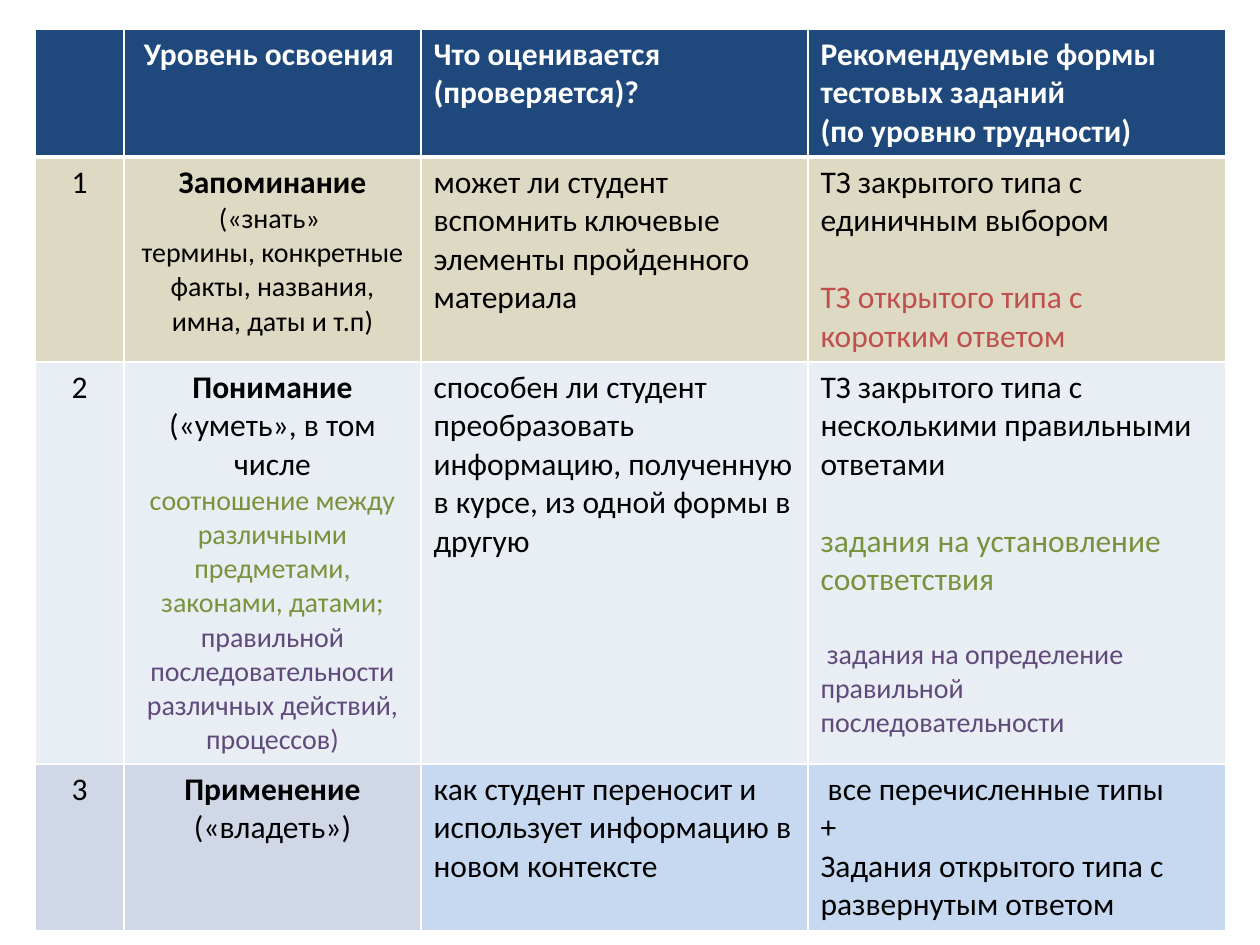
import pptx
import pptx.util
import pptx.dml.color
import pptx.enum.text
import pptx.oxml
from dataclasses import dataclass
from lxml import etree

RGBColor = pptx.dml.color.RGBColor
PP_ALIGN = pptx.enum.text.PP_ALIGN

WHITE = RGBColor(0xFF, 0xFF, 0xFF)
BLACK = RGBColor(0, 0, 0)
NAVY = RGBColor(0x1F, 0x49, 0x7D)
SAND = RGBColor(0xDD, 0xD9, 0xC3)
PALE = RGBColor(0xE9, 0xED, 0xF4)
MIST = RGBColor(0xD0, 0xD8, 0xE8)
SKY = RGBColor(0xC6, 0xD9, 0xF1)
RED = RGBColor(0xC0, 0x50, 0x4D)
GREEN = RGBColor(0x77, 0x93, 0x3C)
PURPLE = RGBColor(0x60, 0x4A, 0x7B)

EMU_PER_PX = 914400 // 126


def px(length):
    return pptx.util.Emu(length * EMU_PER_PX)


@dataclass
class Line:
    """One paragraph of a cell."""
    text: str
    size: int = 18
    color: RGBColor = BLACK
    bold: bool = False
    gap: int = 0


class Page:
    font = "Calibri"

    def __init__(self, deck):
        self.slide = deck.slides.add_slide(deck.slide_layouts[6])

    def table(self, left, top, widths, heights):
        frame = self.slide.shapes.add_table(
            len(heights), len(widths), px(left), px(top),
            px(sum(widths)), px(sum(heights)))
        for column, width in zip(frame.table.columns, widths):
            column.width = px(width)
        for row, height in zip(frame.table.rows, heights):
            row.height = px(height)
        return frame.table

    def cell(self, box, lines, fill, centred):
        box.fill.solid()
        box.fill.fore_color.rgb = fill
        frame = box.text_frame
        for index, line in enumerate(lines):
            para = frame.add_paragraph() if index else frame.paragraphs[0]
            para.alignment = PP_ALIGN.CENTER if centred else PP_ALIGN.LEFT
            if line.gap:
                para.space_before = pptx.util.Pt(line.gap)
            for number, part in enumerate(line.text.split("\n")):
                if number:
                    para.add_line_break()
                self.span(para, part, line)

    def span(self, para, text, line):
        span = para.add_run()
        span.text = text
        span.font.name = self.font
        span.font.size = pptx.util.Pt(line.size)
        span.font.bold = line.bold
        span.font.color.rgb = line.color

    def borders(self, box, color, top=1, bottom=1):
        """Edge lines come before the fill in the cell properties."""
        properties = box._tc.get_or_add_tcPr()
        edges = {"lnL": 1, "lnR": 1, "lnT": top, "lnB": bottom}
        for index, (edge, points) in enumerate(edges.items()):
            line = etree.Element(pptx.oxml.ns.qn("a:" + edge),
                                 w=str(pptx.util.Pt(points)))
            fill = etree.SubElement(line, pptx.oxml.ns.qn("a:solidFill"))
            etree.SubElement(fill, pptx.oxml.ns.qn("a:srgbClr"), val=str(color))
            properties.insert(index, line)


def heading(text):
    return [Line(text, color=WHITE, bold=True)]


# Each row: fills by column, then the lines of each cell
ROWS = [
    ([NAVY] * 4, [
        [],
        heading("Уровень освоения "),
        heading("Что оценивается (проверяется)?"),
        heading("Рекомендуемые формы тестовых заданий\n(по уровню трудности)"),
    ]),
    ([SAND] * 4, [
        [Line("1")],
        [Line("Запоминание", bold=True),
         Line("(«знать» ", 16),
         Line("термины, конкретные факты, названия, имна, даты и т.п)", 16)],
        [Line("может ли студент вспомнить ключевые элементы пройденного материала")],
        [Line("ТЗ закрытого типа с единичным выбором"),
         Line("ТЗ открытого типа с коротким ответом", color=RED, gap=22)],
    ]),
    ([PALE] * 4, [
        [Line("2")],
        [Line("Понимание", bold=True),
         Line("(«уметь», в том числе"),
         Line("соотношение между различными предметами, законами, датами;", 16, GREEN),
         Line("правильной последовательности различных действий, процессов)", 16, PURPLE)],
        [Line("способен ли студент преобразовать информацию, полученную в курсе, "
              "из одной формы в другую")],
        [Line("ТЗ закрытого типа с несколькими правильными ответами"),
         Line("задания на установление соответствия", color=GREEN, gap=22),
         Line(" задания на определение правильной последовательности", 16, PURPLE, gap=22)],
    ]),
    ([MIST, MIST, SKY, SKY], [
        [Line("3")],
        [Line("Применение", bold=True), Line("(«владеть»)")],
        [Line("как студент переносит и использует информацию в новом контексте")],
        [Line(" все перечисленные типы"),
         Line("+"),
         Line("Задания открытого типа с развернутым ответом")],
    ]),
]


def main():
    deck = pptx.Presentation()
    deck.slide_width, deck.slide_height = px(1260), px(945)
    page = Page(deck)

    # Levels table: the first two columns are centred
    table = page.table(35, 29, [89, 297, 387, 418], [128, 205, 402, 166])
    for r, (fills, cells) in enumerate(ROWS):
        for c, (fill, lines) in enumerate(zip(fills, cells)):
            box = table.cell(r, c)
            page.cell(box, lines, fill, centred=c < 2)
            # A thick rule parts the header from the body
            page.borders(box, WHITE, top=3 if r == 1 else 1,
                         bottom=3 if r == 0 else 1)

    deck.save("out.pptx")


if __name__ == "__main__":
    main()
